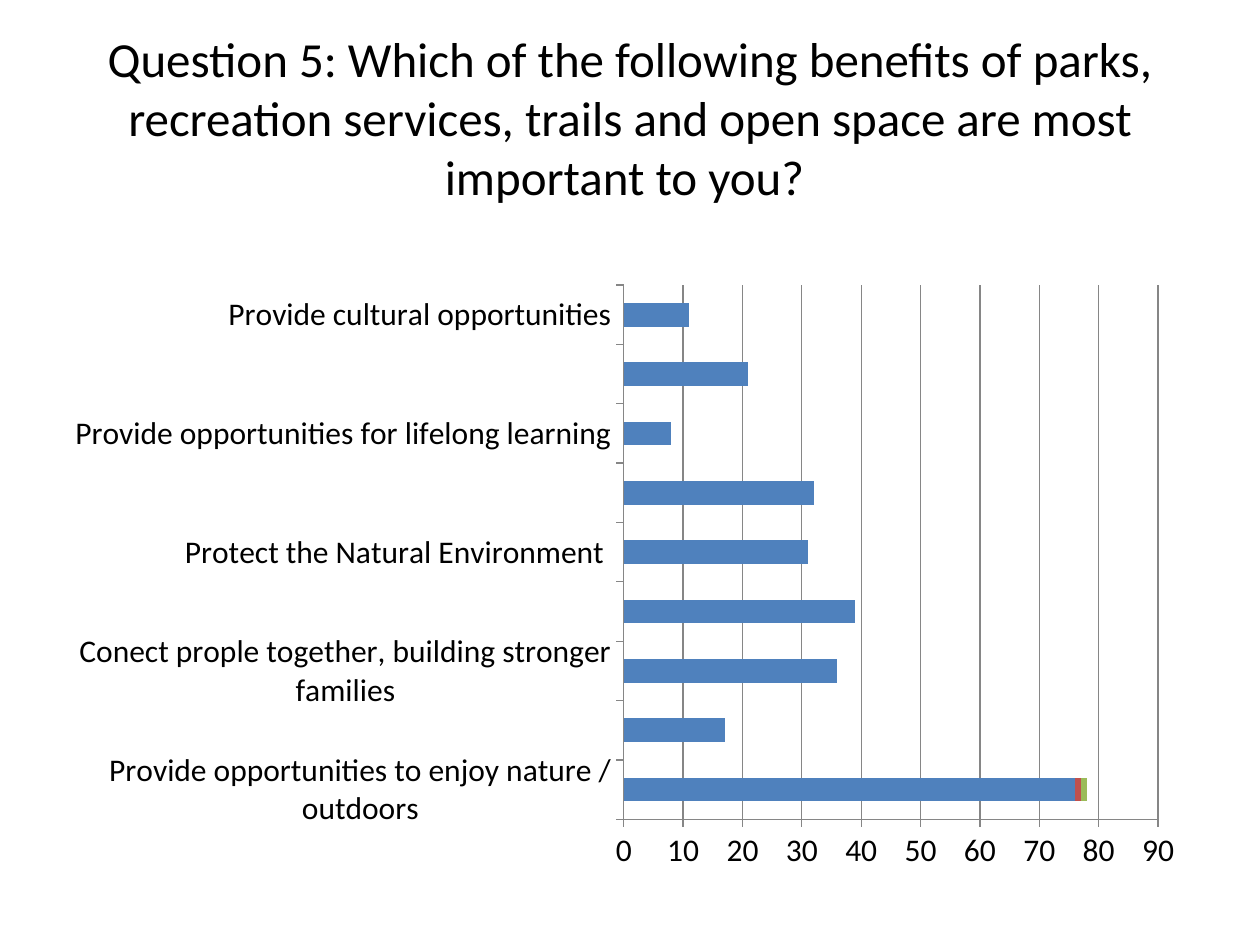
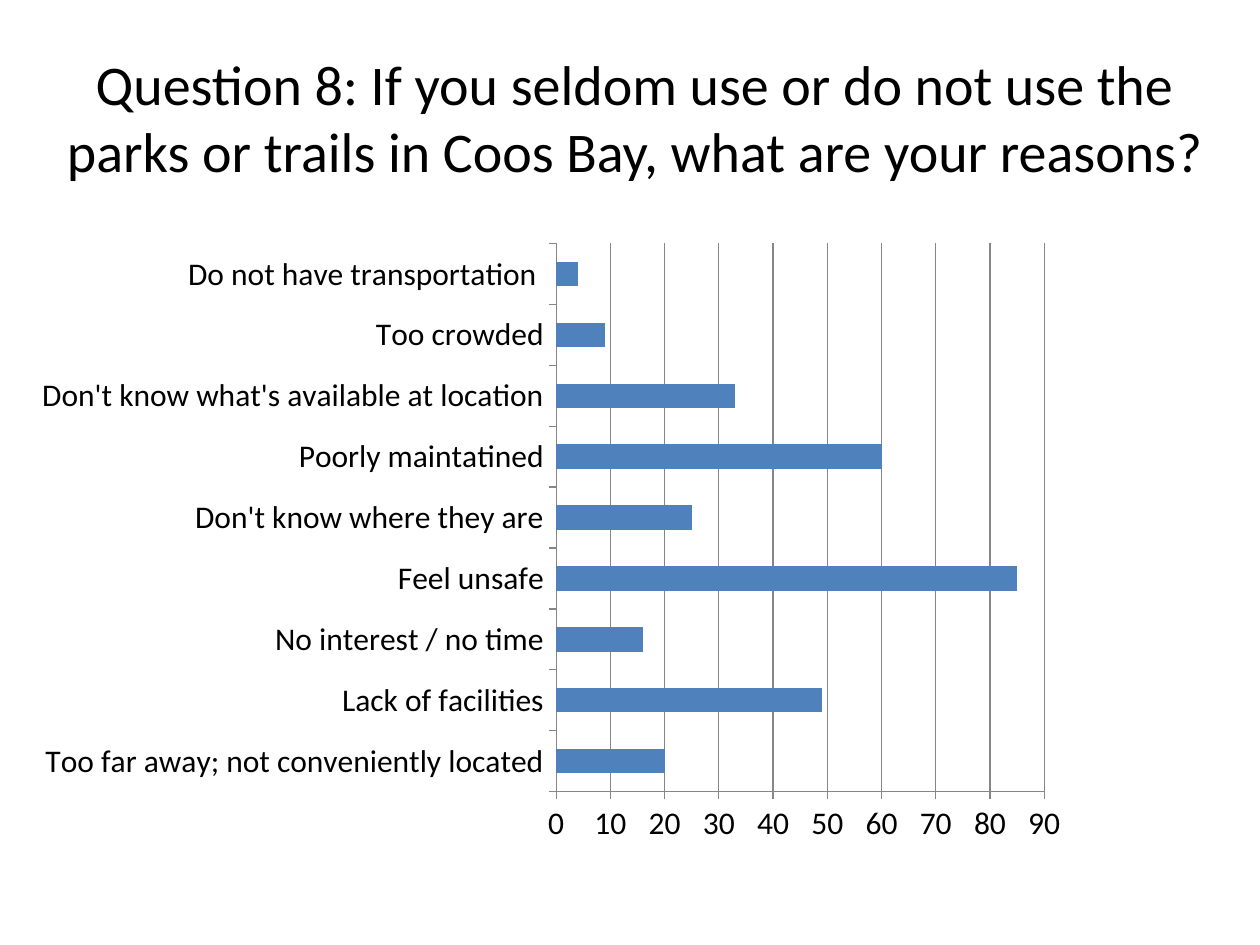
"""Builds two survey slides, each with a question and a stacked bar chart of the answers."""
from pptx import Presentation
from pptx.chart.data import CategoryChartData
from pptx.dml.color import RGBColor
from pptx.enum.chart import XL_CHART_TYPE, XL_TICK_MARK
from pptx.enum.text import MSO_ANCHOR, PP_ALIGN
from pptx.util import Pt

FONT = "Calibri"
COLORS = {
    "text": "000000",
    "background": "FFFFFF",
    "axis": "868686",
    "Series 1": "4F81BD",
    "Series 2": "C0504D",
    "Series 3": "9BBB59",
}

QUESTIONS = [
    {
        "title": "Question 5: Which of the following benefits of parks, recreation services, "
                 "trails and open space are most important to you? ",
        "title_size": 28,
        "title_box": (7, 21.6, 706, 90),
        "chart_box": (30, 156, 654, 348),
        "answers": [
            ("Provide opportunities to enjoy nature / outdoors", 76, 1, 1),
            ("", 17),
            ("Conect prople together, building stronger families", 36),
            ("", 39),
            ("Protect the Natural Environment ", 31),
            ("", 32),
            ("Provide opportunities for lifelong learning", 8),
            ("", 21),
            ("Provide cultural opportunities", 11),
        ],
    },
    {
        "title": "Question 8: If you seldom use or do not use the parks or trails in Coos Bay, "
                 "what are your reasons?",
        "title_size": 32,
        "title_box": (12, 21.6, 702, 90),
        "chart_box": (12, 132, 606, 356.4),
        "answers": [
            ("Too far away; not conveniently located", 20),
            ("Lack of facilities", 49),
            ("No interest / no time", 16),
            ("Feel unsafe", 85),
            ("Don't know where they are", 25),
            ("Poorly maintatined", 60),
            ("Don't know what's available at location", 33),
            ("Too crowded", 9),
            ("Do not have transportation ", 4),
        ],
    },
]


def color(name):
    """Return the named colour."""
    return RGBColor.from_string(COLORS[name])


def add_text(s, box, text, size=18, fill="text", align=PP_ALIGN.CENTER, anchor=MSO_ANCHOR.MIDDLE):
    """Add a wrapped text box."""
    sp = s.shapes.add_textbox(*map(Pt, box))
    tf = sp.text_frame
    tf.word_wrap = True
    tf.vertical_anchor = anchor
    p = tf.paragraphs[0]
    p.alignment = align
    r = p.add_run()
    r.text = text
    r.font.name = FONT
    r.font.size = Pt(size)
    r.font.color.rgb = color(fill)


def add_answer_chart(s, box, answers):
    """Add a stacked bar chart with one bar for each answer."""
    data = CategoryChartData()
    data.categories = [label for label, *_ in answers]
    counts = [values for _, *values in answers]
    for i in range(max(map(len, counts))):
        data.add_series(f"Series {i + 1}", [c[i] if i < len(c) else None for c in counts])

    chart = s.shapes.add_chart(XL_CHART_TYPE.BAR_STACKED, *map(Pt, box), data).chart
    chart.has_title = False
    chart.has_legend = False
    chart.font.name = FONT
    chart.font.size = Pt(18)
    chart.font.color.rgb = color("text")

    plot = chart.plots[0]
    plot.gap_width = 150
    plot.overlap = 100
    plot.vary_by_categories = False
    for series in plot.series:
        series.format.fill.solid()
        series.format.fill.fore_color.rgb = color(series.name)

    for axis in (chart.category_axis, chart.value_axis):
        axis.major_tick_mark = XL_TICK_MARK.OUTSIDE
        axis.minor_tick_mark = XL_TICK_MARK.NONE
        axis.format.line.color.rgb = color("axis")
        axis.format.line.width = Pt(0.75)
    chart.category_axis.has_major_gridlines = False
    value_axis = chart.value_axis
    value_axis.has_major_gridlines = True
    value_axis.major_gridlines.format.line.color.rgb = color("axis")
    value_axis.major_gridlines.format.line.width = Pt(0.75)
    value_axis.minimum_scale = 0
    value_axis.maximum_scale = 90
    value_axis.major_unit = 10


def add_question_slide(prs, question):
    """Add a slide with a question above its answer chart."""
    s = prs.slides.add_slide(prs.slide_layouts[6])
    s.background.fill.solid()
    s.background.fill.fore_color.rgb = color("background")
    add_answer_chart(s, question["chart_box"], question["answers"])
    add_text(s, question["title_box"], question["title"], size=question["title_size"])


def main():
    """Build and save the presentation."""
    prs = Presentation()
    prs.slide_width, prs.slide_height = Pt(720), Pt(540)
    for question in QUESTIONS:
        add_question_slide(prs, question)
    prs.save("out.pptx")


if __name__ == "__main__":
    main()
